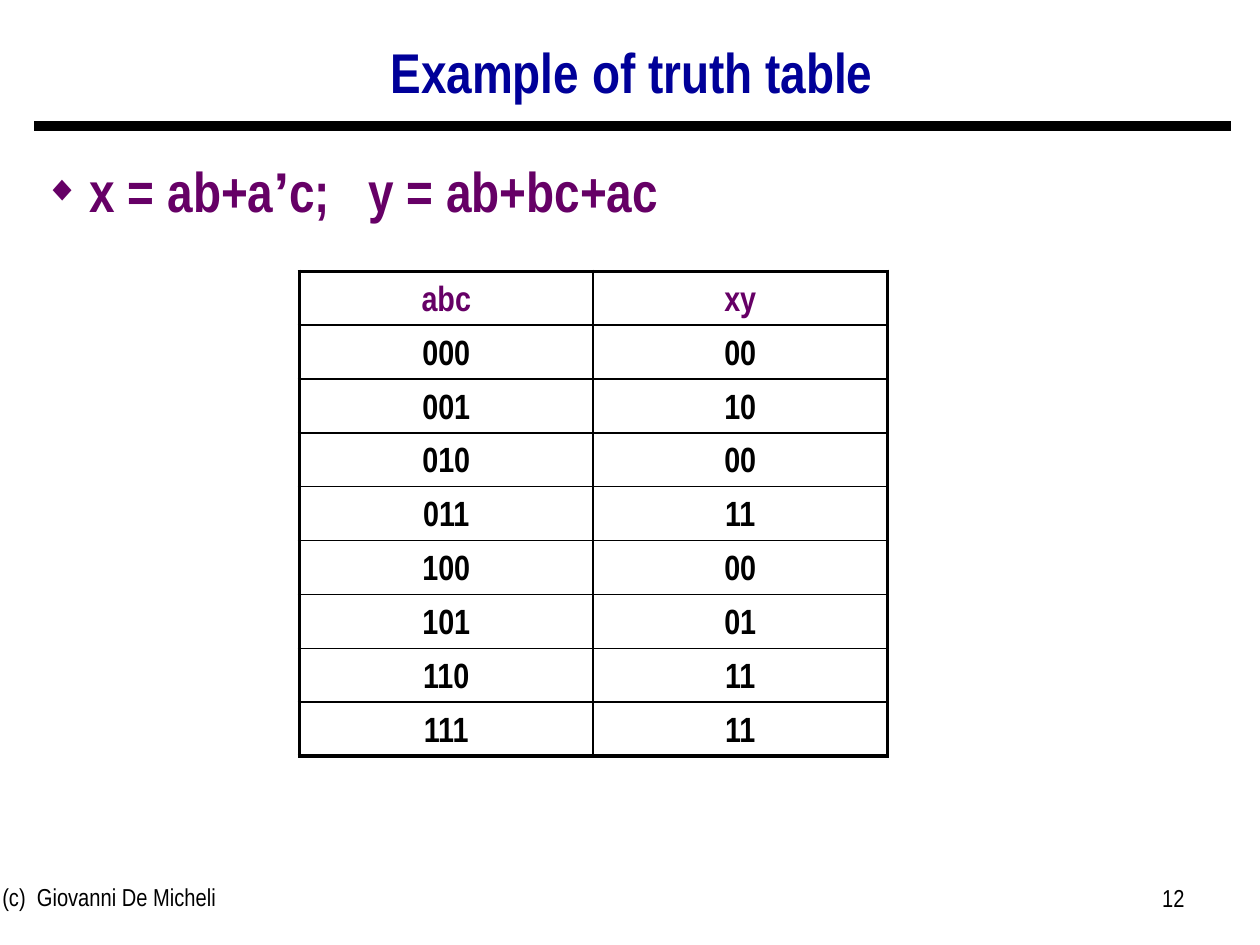
"""Build the truth table slide."""
from pptx import Presentation
from pptx.dml.color import RGBColor
from pptx.enum.shapes import MSO_CONNECTOR
from pptx.enum.text import MSO_ANCHOR, MSO_AUTO_SIZE, PP_ALIGN
from pptx.oxml.ns import qn
from pptx.util import Pt
from lxml import etree

BLACK = RGBColor(0x00, 0x00, 0x00)
BLUE = RGBColor(0x00, 0x00, 0x99)
PURPLE = RGBColor(0x66, 0x00, 0x66)
STRAIGHT = MSO_CONNECTOR.STRAIGHT
MIDDLE, TOP = MSO_ANCHOR.MIDDLE, MSO_ANCHOR.TOP
NO_FIT = MSO_AUTO_SIZE.NONE
LEFT, CENTER, RIGHT = PP_ALIGN.LEFT, PP_ALIGN.CENTER, PP_ALIGN.RIGHT
NARROW = "Arial Narrow"
THICK, THIN = 2.25, 1
ROWS = [("abc", "xy"), ("000", "00"), ("001", "10"), ("010", "00"), ("011", "11"),
        ("100", "00"), ("101", "01"), ("110", "11"), ("111", "11")]


def add_run(p, text, size, color=BLACK, bold=False, font=NARROW):
    """Add one formatted run to a paragraph."""
    r = p.add_run()
    r.text = text
    r.font.name, r.font.size, r.font.bold = font, Pt(size), bold
    r.font.color.rgb = color


def write(tf, text, align=LEFT, spacing=1, **style):
    """Fill the first paragraph of a text frame and return it."""
    p = tf.paragraphs[0]
    p.alignment, p.line_spacing = align, spacing
    add_run(p, text, **style)
    return p


def place(sp, left, top, width, height, anchor=TOP):
    """Position a text shape and return its text frame."""
    sp.left, sp.top, sp.width, sp.height = Pt(left), Pt(top), Pt(width), Pt(height)
    tf = sp.text_frame
    tf.word_wrap, tf.auto_size, tf.vertical_anchor = True, NO_FIT, anchor
    return tf


def set_bullet(p, char, color, percent, indent):
    """Give a paragraph a coloured bullet with a hanging indent."""
    pPr = p._p.get_or_add_pPr()
    pPr.set("marL", str(Pt(indent)))
    pPr.set("indent", str(-Pt(indent)))
    clr = etree.SubElement(pPr, qn("a:buClr"))
    etree.SubElement(clr, qn("a:srgbClr"), val=str(color))
    etree.SubElement(pPr, qn("a:buSzPct"), val=str(percent * 1000))
    etree.SubElement(pPr, qn("a:buFont"), typeface="Arial")
    etree.SubElement(pPr, qn("a:buChar"), char=char)


def set_borders(cell, widths):
    """Draw the left, right, top and bottom borders of a cell."""
    tcPr = cell._tc.get_or_add_tcPr()
    for side, width in zip("LRTB", widths):
        ln = etree.SubElement(tcPr, qn(f"a:ln{side}"), w=str(Pt(width)))
        fill = etree.SubElement(ln, qn("a:solidFill"))
        etree.SubElement(fill, qn("a:srgbClr"), val=str(BLACK))


def add_rule(s, x1, x2, y, width):
    """Add a horizontal rule without a shadow."""
    line = s.shapes.add_connector(STRAIGHT, Pt(x1), Pt(y), Pt(x2), Pt(y))
    line.line.color.rgb, line.line.width = BLACK, Pt(width)
    etree.SubElement(line._element.spPr, qn("a:effectLst"))


def add_footer(s, text, left, top, width, align):
    """Add a small text box at the foot of the slide."""
    box = s.shapes.add_textbox(0, 0, 0, 0)
    write(place(box, left, top, width, 37.5), text, align, size=14)


def add_truth_table(s, left, top, col_width, row_height):
    """Add the truth table with a thick outline and thin inner lines."""
    n_rows, n_cols = len(ROWS), len(ROWS[0])
    table = s.shapes.add_table(n_rows, n_cols, Pt(left), Pt(top),
                               Pt(col_width * n_cols), Pt(row_height * n_rows)).table
    table.first_row = table.horz_banding = False
    for col in table.columns:
        col.width = Pt(col_width)
    for i, row in enumerate(ROWS):
        table.rows[i].height = Pt(row_height)
        for j, text in enumerate(row):
            cell = table.cell(i, j)
            edges = (j == 0, j == n_cols - 1, i == 0, i == n_rows - 1)
            set_borders(cell, [THICK if edge else THIN for edge in edges])
            cell.fill.background()
            write(cell.text_frame, text, CENTER, 1.25, size=20, bold=True,
                  color=BLACK if i else PURPLE)


def main():
    """Build and save the slide."""
    prs = Presentation()
    prs.slide_width, prs.slide_height = Pt(720), Pt(540)
    s = prs.slides.add_slide(prs.slide_layouts[1])
    title, body = s.placeholders

    add_rule(s, 19.5, 703.5, 72, 6)
    add_footer(s, "(c)  Giovanni De Micheli", -5.75, 500.5, 228, LEFT)
    add_footer(s, "12", 516, 501, 168, RIGHT)

    write(place(title, 18.75, 16, 684.75, 54, MIDDLE), "Example of truth table",
          CENTER, 0.9, size=32, color=BLUE, bold=True)

    formula = {"size": 32, "color": PURPLE, "bold": True}
    p = write(place(body, 18, 76.5, 495.5, 418), "x = ab+a", LEFT, 1.25, **formula)
    add_run(p, "’", font="Arial", **formula)
    add_run(p, "c;   y = ab+bc+ac", **formula)
    p.space_before = Pt(12)
    set_bullet(p, "◆", PURPLE, 64, 26)

    add_truth_table(s, 171, 155, 168, 30.8)
    prs.save("out.pptx")


if __name__ == "__main__":
    main()
